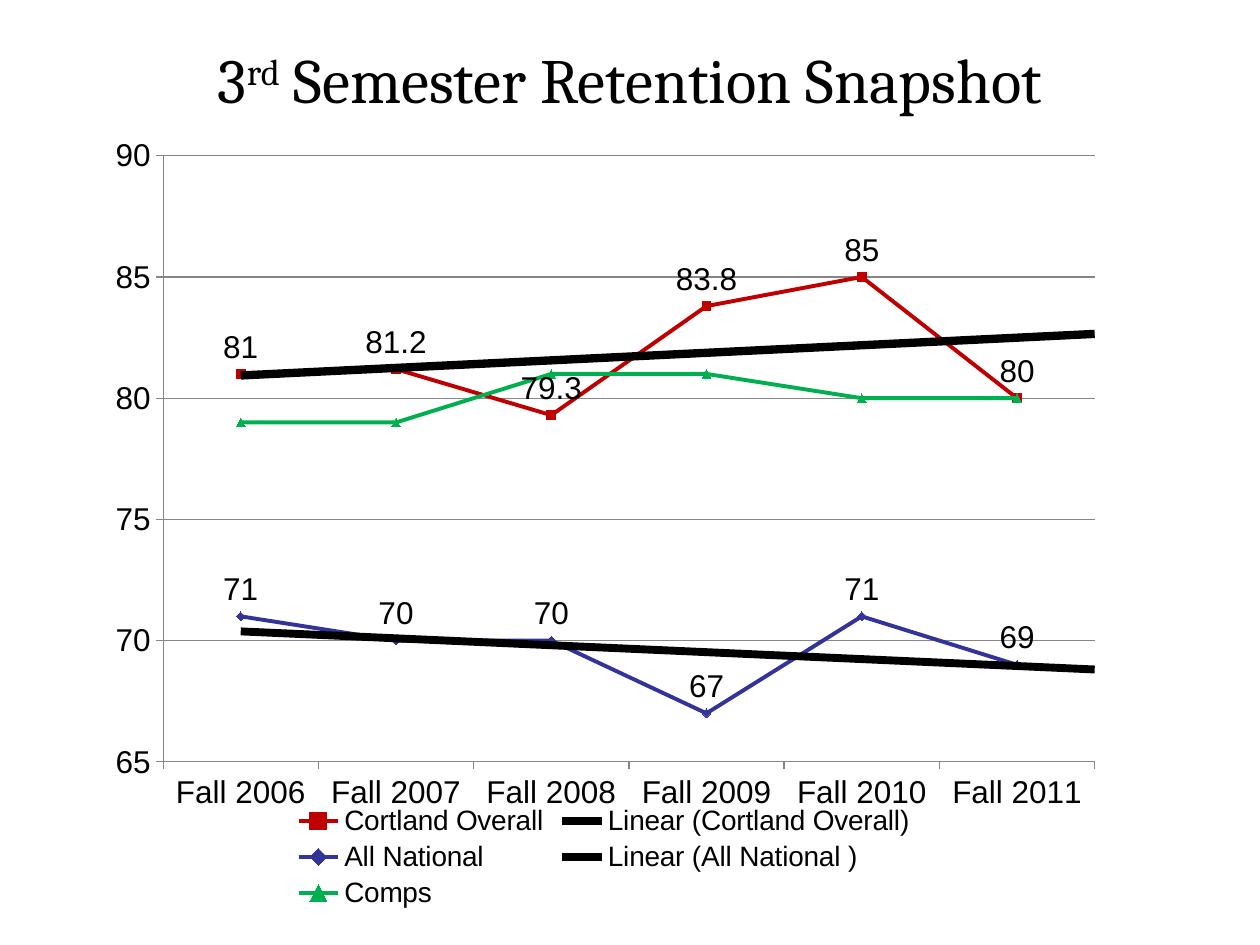
from dataclasses import dataclass
from typing import Optional

from lxml import etree
from pptx import Presentation
from pptx.chart.data import CategoryChartData
from pptx.dml.color import RGBColor
from pptx.enum.chart import XL_CHART_TYPE as ChartType
from pptx.enum.chart import XL_LABEL_POSITION as LabelPos
from pptx.enum.chart import XL_LEGEND_POSITION as LegendPos
from pptx.enum.chart import XL_MARKER_STYLE as Marker
from pptx.enum.chart import XL_TICK_MARK as Tick
from pptx.enum.text import MSO_ANCHOR, PP_ALIGN
from pptx.oxml import parse_xml
from pptx.util import Inches, Pt

C_NS = "http://schemas.openxmlformats.org/drawingml/2006/chart"
A_NS = "http://schemas.openxmlformats.org/drawingml/2006/main"
BLACK, GRID = "000000", "868686"


@dataclass
class Line:
    name: str
    values: tuple
    color: str
    marker: Marker
    trend_width: Optional[float] = None


LINES = [
    Line("Cortland Overall", (81, 81.2, 79.3, 83.8, 85, 80), "C00000", Marker.SQUARE, 4.75),
    Line("All National ", (71, 70, 70, 67, 71, 69), "333399", Marker.DIAMOND, 4.5),
    Line("Comps", (79, 79, 81, 81, 80, 80), "00B050", Marker.TRIANGLE),
]


def rgb(color: str) -> RGBColor:
    return RGBColor.from_string(color)


def set_font(font, size: float, name: str = "Arial", color: str = BLACK) -> None:
    font.size, font.name, font.bold = Pt(size), name, False
    font.color.rgb = rgb(color)


def add_run(p, text: str, size: float = 36, name: str = "Cambria", baseline: int = 0) -> None:
    r = p.add_run()
    r.text = text
    set_font(r.font, size, name)
    if baseline:
        r._r.get_or_add_rPr().set("baseline", str(baseline * 1000))


def set_line(line, color: str, width: float) -> None:
    line.color.rgb = rgb(color)
    line.width = Pt(width)


def add_trend(ser, width: float) -> None:
    trend = parse_xml(
        f'<c:trendline xmlns:c="{C_NS}" xmlns:a="{A_NS}"><c:spPr>'
        f'<a:ln w="{Pt(width)}"><a:solidFill><a:srgbClr val="{BLACK}"/></a:solidFill></a:ln>'
        '</c:spPr><c:trendlineType val="linear"/><c:forward val="0.5"/>'
        '<c:dispRSqr val="0"/><c:dispEq val="0"/></c:trendline>')
    ser.find(f"{{{C_NS}}}cat").addprevious(trend)


def set_plot_layout(chart, x: float, y: float, w: float, h: float) -> None:
    area = chart._chartSpace.chart.plotArea
    for old in area.findall(f"{{{C_NS}}}layout"):
        area.remove(old)
    layout = etree.fromstring(f'<c:layout xmlns:c="{C_NS}"/>')
    manual = etree.SubElement(layout, f"{{{C_NS}}}manualLayout")
    settings = {"layoutTarget": "inner", "xMode": "edge", "yMode": "edge",
                "x": x, "y": y, "w": w, "h": h}
    for tag, value in settings.items():
        etree.SubElement(manual, f"{{{C_NS}}}{tag}").set("val", str(value))
    area.insert(0, parse_xml(etree.tostring(layout)))


def format_series(series, line: Line) -> None:
    series.smooth = False
    set_line(series.format.line, line.color, 2.25)
    marker = series.marker
    marker.style, marker.size = line.marker, 5
    marker.format.fill.solid()
    marker.format.fill.fore_color.rgb = rgb(line.color)
    set_line(marker.format.line, line.color, 0.75)
    if line.trend_width:
        labels = series.data_labels
        labels.show_value = True
        labels.position = LabelPos.ABOVE
        set_font(labels.font, 18)
        add_trend(series._element, line.trend_width)


def add_retention_chart(s) -> None:
    data = CategoryChartData()
    data.categories = [f"Fall {year}" for year in range(2006, 2012)]
    for line in LINES:
        data.add_series(line.name, line.values)
    chart = s.shapes.add_chart(ChartType.LINE_MARKERS, Inches(0.42), Inches(0.92),
                               Inches(8.75), Inches(6.33), data).chart
    set_font(chart.font, 18)
    chart.has_title = False
    chart.has_legend = True
    chart.legend.position = LegendPos.BOTTOM
    chart.legend.include_in_layout = False
    set_font(chart.legend.font, 16)
    chart.plots[0].vary_by_categories = False
    set_plot_layout(chart, 0.1, 0.05, 0.845, 0.76)

    for axis in (chart.category_axis, chart.value_axis):
        axis.major_tick_mark = Tick.OUTSIDE
        axis.minor_tick_mark = Tick.NONE
        set_line(axis.format.line, GRID, 0.75)
        set_font(axis.tick_labels.font, 18)
    values = chart.value_axis
    values.minimum_scale, values.maximum_scale, values.major_unit = 65, 90, 5
    values.has_major_gridlines = True
    set_line(values.major_gridlines.format.line, GRID, 0.75)

    for series, line in zip(chart.plots[0].series, LINES):
        format_series(series, line)


def add_title(s) -> None:
    sp = s.shapes.title
    sp.left, sp.top, sp.width, sp.height = map(Inches, (0.75, 0, 8.5, 1.25))
    tf = sp.text_frame
    tf.word_wrap = True
    tf.vertical_anchor = MSO_ANCHOR.MIDDLE
    p = tf.paragraphs[0]
    p.alignment = PP_ALIGN.CENTER
    add_run(p, "3")
    add_run(p, "rd", baseline=30)
    add_run(p, " Semester Retention Snapshot")


def main() -> None:
    prs = Presentation()
    prs.slide_width, prs.slide_height = Inches(10), Inches(7.5)
    s = prs.slides.add_slide(prs.slide_layouts[5])
    add_title(s)
    add_retention_chart(s)
    prs.save("out.pptx")


if __name__ == "__main__":
    main()
